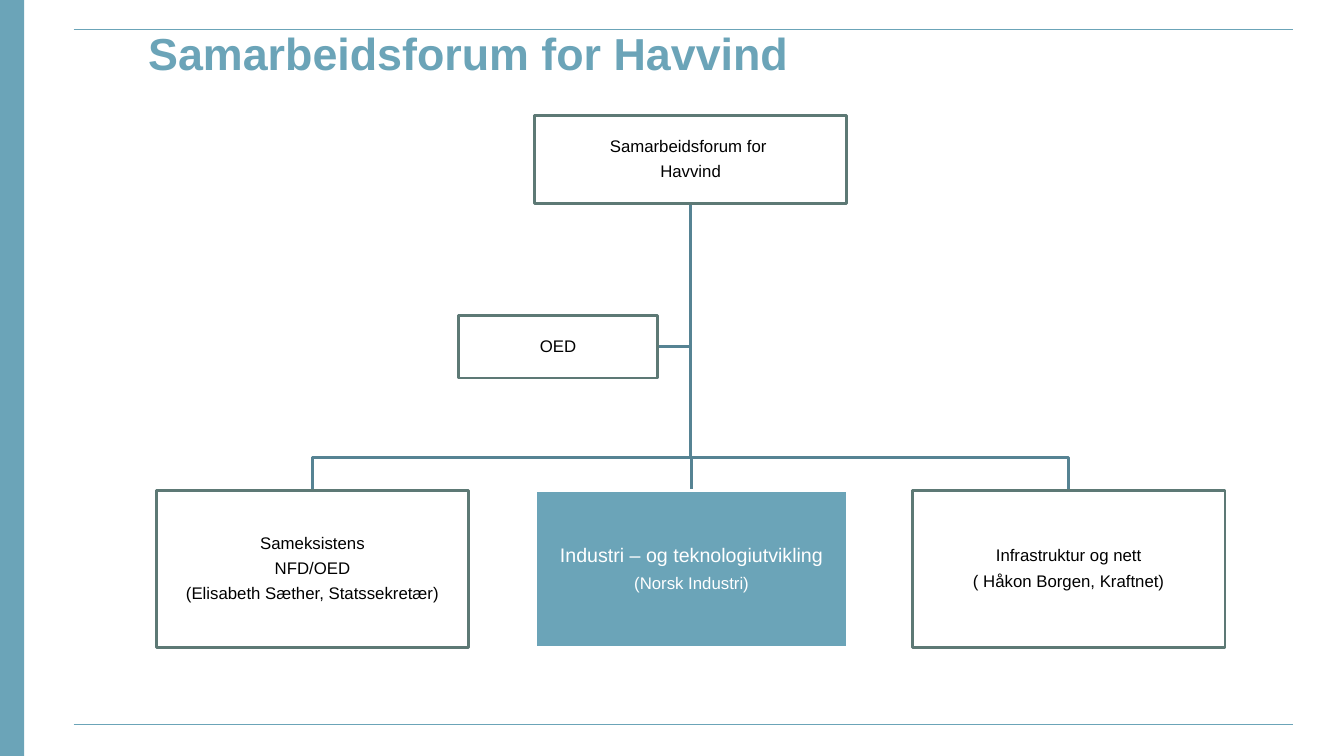
from pptx import Presentation
from pptx import util as u
from pptx.dml.color import RGBColor
from pptx.enum import shapes, text
from lxml import etree

PX = 9144
TEAL = RGBColor(0x6B, 0xA4, 0xB8)
STEEL = RGBColor(0x56, 0x83, 0x93)
MOSS = RGBColor(0x5D, 0x79, 0x75)
WHITE = RGBColor(0xFF, 0xFF, 0xFF)
BLACK = RGBColor(0, 0, 0)
FONT = "Arial"
NS = "{http://schemas.openxmlformats.org/drawingml/2006/main}"

ROOT = (530, 115, 310, 87)
STAFF = (455, 313, 197, 62)
BUS = 454
UNITS = [
    ((155, 487, 310, 155), False, [
        ("Sameksistens", 12),
        ("NFD/OED", 12),
        ("(Elisabeth Sæther, Statssekretær)", 12),
    ]),
    ((531, 487, 310, 155), True, [
        ("Industri – og teknologiutvikling", 14),
        ("(Norsk Industri)", 12),
    ]),
    ((905, 487, 310, 155), False, [
        ("Infrastruktur og nett", 12),
        ("( Håkon Borgen, Kraftnet)", 12),
    ]),
]


def px(*nums):
    return [u.Emu(n * PX) for n in nums]


def add_rect(slide, box):
    rect = slide.shapes.add_shape(shapes.MSO_SHAPE.RECTANGLE, *px(*box))
    rect.shadow.inherit = False
    return rect


def add_run(para, words, size, color, bold=False):
    run = para.add_run()
    run.text = words
    run.font.name = FONT
    run.font.size = u.Pt(size)
    run.font.bold = bold
    run.font.color.rgb = color


def add_frame(slide, box):
    left, top, width, height = box
    bar = add_rect(slide, (0, 0, 24, height))
    bar.fill.solid()
    bar.fill.fore_color.rgb = TEAL
    bar.line.fill.background()
    for y in (top + 29, top + height - 31):
        rule = slide.shapes.add_connector(
            shapes.MSO_CONNECTOR.STRAIGHT,
            *px(left + 73, y, left + width - 51, y))
        rule.line.color.rgb = TEAL
        rule.line.width = u.Pt(0.75)
        etree.SubElement(rule._element.spPr, NS + "effectLst")


def add_title(slide, box, words):
    title = slide.shapes.title
    title.left, title.top, title.width, title.height = px(*box)
    frame = title.text_frame
    frame.word_wrap = True
    frame.auto_size = text.MSO_AUTO_SIZE.SHAPE_TO_FIT_TEXT
    frame.vertical_anchor = text.MSO_ANCHOR.TOP
    para = frame.paragraphs[0]
    para.alignment = text.PP_ALIGN.LEFT
    add_run(para, words, 32, TEAL, True)


def add_link(slide, points):
    start, *rest = [px(*point) for point in points]
    maker = slide.shapes.build_freeform(*start)
    maker.add_line_segments(rest, close=False)
    link = maker.convert_to_shape()
    link.shadow.inherit = False
    link.fill.background()
    link.line.color.rgb = STEEL
    link.line.width = u.Pt(2)


def add_node(slide, box, lines, solid=False):
    node = add_rect(slide, box)
    if solid:
        node.fill.solid()
        node.fill.fore_color.rgb = TEAL
    else:
        node.fill.background()
    node.line.color.rgb = WHITE if solid else MOSS
    node.line.width = u.Pt(2)
    frame = node.text_frame
    frame.word_wrap = True
    frame.vertical_anchor = text.MSO_ANCHOR.MIDDLE
    frame.margin_left, frame.margin_top = px(1, 1)
    frame.margin_right, frame.margin_bottom = px(1, 1)
    for i, (words, size) in enumerate(lines):
        para = frame.add_paragraph() if i else frame.paragraphs[0]
        para.alignment = text.PP_ALIGN.CENTER
        para.line_spacing = 0.9
        para.space_after = u.Pt(round(size * 0.42))
        add_run(para, words, size, WHITE if solid else BLACK)


def add_chart(slide):
    left, top, width, height = ROOT
    mid, foot = left + width // 2, top + height
    x, y, w, h = STAFF
    level = y + h // 2
    add_link(slide, [(mid, foot), (mid, level), (x + w, level)])
    for (x, y, w, h), solid, lines in UNITS:
        end = x + w // 2
        add_link(slide, [(mid, foot), (mid, BUS), (end, BUS), (end, y)])
    add_node(slide, ROOT, [("Samarbeidsforum for ", 12), ("Havvind", 12)])
    for box, solid, lines in UNITS:
        add_node(slide, box, lines, solid)
    add_node(slide, STAFF, [("OED", 12)])


def main():
    deck = Presentation()
    deck.slide_width, deck.slide_height = px(1333, 750)
    slide = deck.slides.add_slide(deck.slide_layouts[5])
    add_frame(slide, (0, 0, 1333, 750))
    add_chart(slide)
    add_title(slide, (137, 20, 1060, 64), "Samarbeidsforum for Havvind")
    deck.save("out.pptx")


if __name__ == "__main__":
    main()
